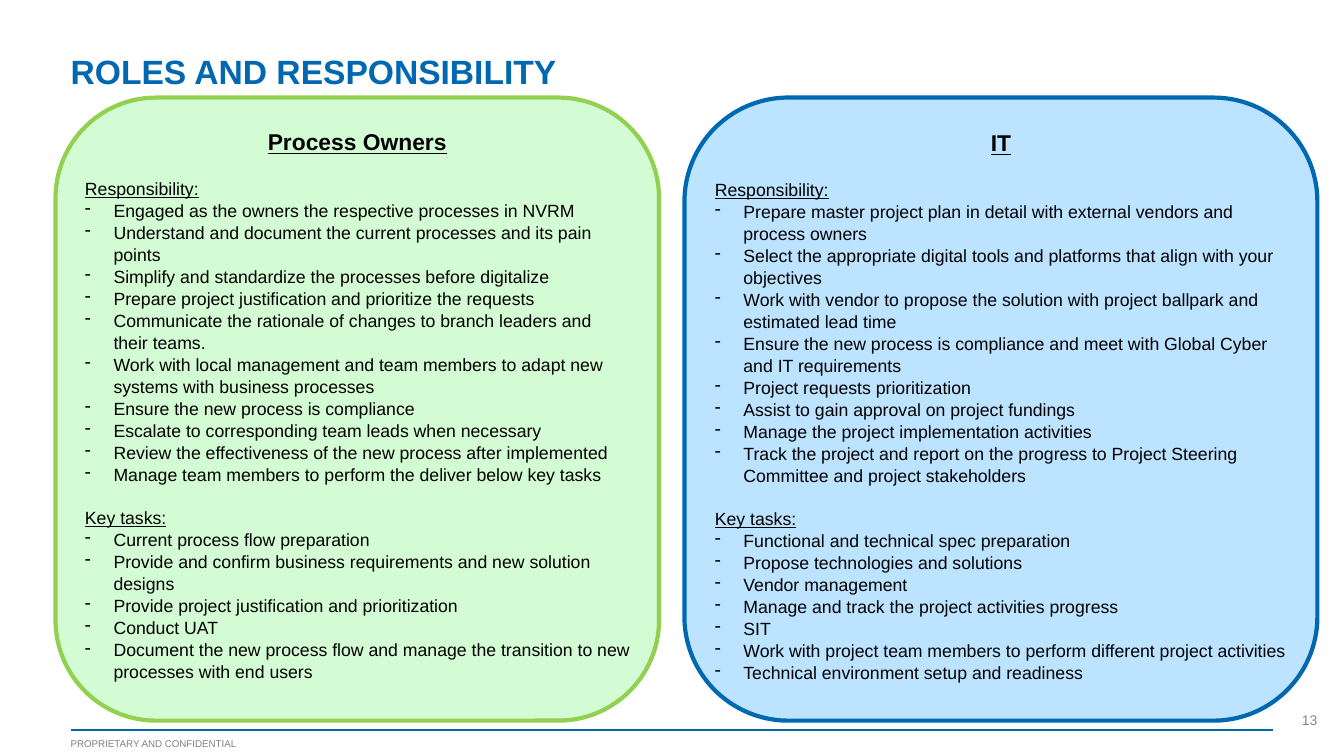
"""Build the roles and responsibility slide with one panel per team."""
from dataclasses import dataclass

from lxml import etree
from pptx import Presentation
from pptx.dml.color import RGBColor
from pptx.enum.shapes import MSO_CONNECTOR, MSO_SHAPE
from pptx.enum.text import MSO_ANCHOR, MSO_AUTO_SIZE, PP_ALIGN
from pptx.oxml.ns import qn
from pptx.util import Cm, Pt

ROUNDED = MSO_SHAPE.ROUNDED_RECTANGLE
STRAIGHT = MSO_CONNECTOR.STRAIGHT
TOP, MIDDLE, BOTTOM = MSO_ANCHOR.TOP, MSO_ANCHOR.MIDDLE, MSO_ANCHOR.BOTTOM
LEFT, CENTER, RIGHT = PP_ALIGN.LEFT, PP_ALIGN.CENTER, PP_ALIGN.RIGHT
NO_FIT = MSO_AUTO_SIZE.NONE
TITLE_ONLY = 5


@dataclass(frozen=True)
class Theme:
    font: str = "Arial"
    blue: str = "0067B1"
    pale_blue: str = "BCE3FF"
    green: str = "92D050"
    pale_green: str = "D4FCD4"
    ink: str = "000000"
    footer_grey: str = "808080"
    number_grey: str = "868686"
    title_size: float = 24
    heading_size: float = 16.3
    body_size: float = 12.6
    number_size: float = 10
    footer_size: float = 7
    body_spacing: float = 1.04
    section_gap: float = 15.15


THEME = Theme()
MARGIN = 1.78
PANEL_TOP, PANEL_HEIGHT = 2.46, 15.7
BULLET_INDENT = 0.72

OWNER_SECTIONS = {
    "Responsibility:": [
        "Engaged as the owners the respective processes in NVRM",
        "Understand and document the current processes and its pain points",
        "Simplify and standardize the processes before digitalize",
        "Prepare project justification and prioritize the requests",
        "Communicate the rationale of changes to branch leaders and their teams.",
        "Work with local management and team members to adapt new systems with business processes",
        "Ensure the new process is compliance",
        "Escalate to corresponding team leads when necessary",
        "Review the effectiveness of the new process after implemented",
        "Manage team members to perform the deliver below key tasks",
    ],
    "Key tasks:": [
        "Current process flow preparation",
        "Provide and confirm business requirements and new solution designs",
        "Provide project justification and prioritization",
        "Conduct UAT",
        "Document the new process flow and manage the transition to new processes with end users",
    ],
}
IT_SECTIONS = {
    "Responsibility:": [
        "Prepare master project plan in detail with external vendors and process owners",
        "Select the appropriate digital tools and platforms that align with your objectives",
        "Work with vendor to propose the solution with project ballpark and estimated lead time",
        "Ensure the new process is compliance and meet with Global Cyber and IT requirements",
        "Project requests prioritization",
        "Assist to gain approval on project fundings",
        "Manage the project implementation activities",
        "Track the project and report on the progress to Project Steering Committee and project stakeholders",
    ],
    "Key tasks:": [
        "Functional and technical spec preparation",
        "Propose technologies and solutions",
        "Vendor management",
        "Manage and track the project activities progress",
        "SIT",
        "Work with project team members to perform different project activities",
        "Technical environment setup and readiness",
    ],
}


class PageBuilder:
    def __init__(self, page, theme):
        self.page = page
        self.theme = theme

    def prepare(self, frame, anchor):
        frame.word_wrap = True
        frame.auto_size = NO_FIT
        frame.vertical_anchor = anchor
        frame.margin_left = frame.margin_right = 0
        frame.margin_top = frame.margin_bottom = 0

    def fill_para(self, para, text, size, color, align=LEFT, bold=False, underline=False):
        para.text = text
        para.alignment = align
        for span in para.runs:
            font = span.font
            font.name = self.theme.font
            font.size = Pt(size)
            font.bold = bold
            font.underline = underline
            font.color.rgb = RGBColor.from_string(color)

    def title(self, text, left, top, width, height):
        box = self.page.shapes.title
        box.left, box.top, box.width, box.height = map(Cm, (left, top, width, height))
        self.prepare(box.text_frame, MIDDLE)
        para = box.text_frame.paragraphs[0]
        self.fill_para(para, text, self.theme.title_size, self.theme.blue, bold=True)
        para.line_spacing = 0.9

    def label(self, text, left, top, width, height, size, color, align=LEFT):
        box = self.page.shapes.add_textbox(*map(Cm, (left, top, width, height)))
        self.prepare(box.text_frame, BOTTOM)
        self.fill_para(box.text_frame.paragraphs[0], text, size, color, align)

    def rule(self, left, right, y):
        line = self.page.shapes.add_connector(STRAIGHT, Cm(left), Cm(y), Cm(right), Cm(y))
        line.line.color.rgb = RGBColor.from_string(self.theme.blue)
        line.line.width = Pt(1)
        etree.SubElement(line._element.spPr, qn("a:effectLst"))

    def bullet(self, para):
        properties = para._p.get_or_add_pPr()
        properties.set("marL", str(Cm(BULLET_INDENT)))
        properties.set("indent", str(-Cm(BULLET_INDENT)))
        etree.SubElement(properties, qn("a:buChar"), char="-")

    def panel(self, heading, sections, left, width, fill, outline):
        theme = self.theme
        box = self.page.shapes.add_shape(
            ROUNDED, Cm(left), Cm(PANEL_TOP), Cm(width), Cm(PANEL_HEIGHT))
        box.shadow.inherit = False
        box.fill.solid()
        box.fill.fore_color.rgb = RGBColor.from_string(fill)
        box.line.color.rgb = RGBColor.from_string(outline)
        box.line.width = Pt(3)
        frame = box.text_frame
        self.prepare(frame, TOP)
        self.fill_para(frame.paragraphs[0], heading, theme.heading_size, theme.ink,
                       CENTER, bold=True, underline=True)
        frame.paragraphs[0].line_spacing = theme.body_spacing
        for section, items in sections.items():
            para = frame.add_paragraph()
            para.line_spacing = theme.body_spacing
            para.space_before = Pt(theme.section_gap)
            self.fill_para(para, section, theme.body_size, theme.ink, underline=True)
            for item in items:
                para = frame.add_paragraph()
                para.line_spacing = theme.body_spacing
                self.bullet(para)
                self.fill_para(para, item, theme.body_size, theme.ink)


def main():
    deck = Presentation()
    deck.slide_width, deck.slide_height = Cm(33.87), Cm(19.05)
    page = deck.slides.add_slide(deck.slide_layouts[TITLE_ONLY])
    builder = PageBuilder(page, THEME)
    builder.rule(MARGIN, 32.08, 18.39)
    builder.label("PROPRIETARY AND CONFIDENTIAL", MARGIN, 18.59, 4.62, 0.3,
                  THEME.footer_size, THEME.footer_grey)
    builder.label("13", 32.51, 17.98, 0.69, 0.38,
                  THEME.number_size, THEME.number_grey, RIGHT)
    builder.title("ROLES AND RESPONSIBILITY", MARGIN, 0.89, 25.45, 1.93)
    builder.panel("Process Owners", OWNER_SECTIONS, 1.4, 15.21,
                  THEME.pale_green, THEME.green)
    builder.panel("IT", IT_SECTIONS, 17.25, 15.95, THEME.pale_blue, THEME.blue)
    deck.save("out.pptx")


if __name__ == "__main__":
    main()
